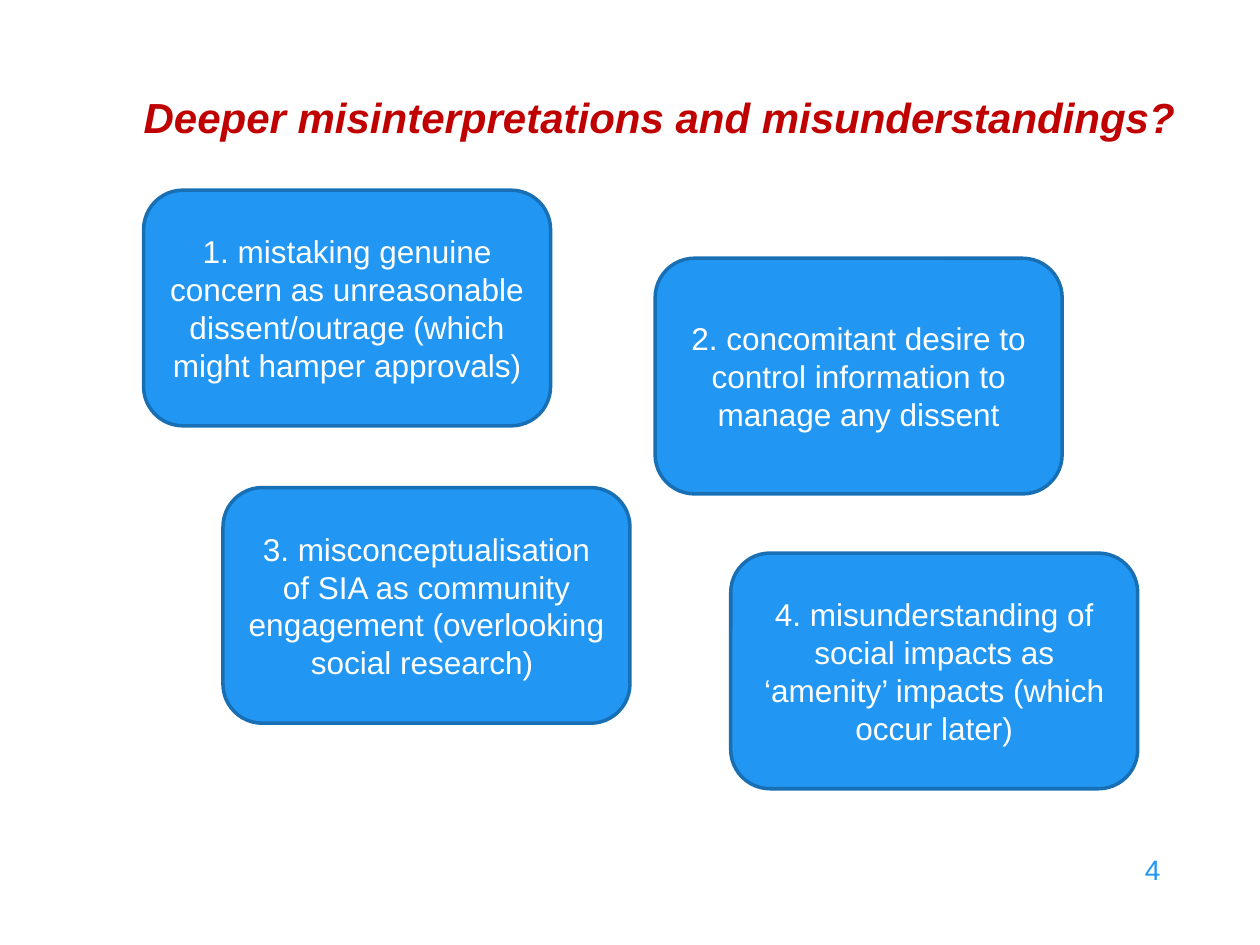
from pptx import Presentation
from pptx.dml.color import RGBColor
from pptx.enum.shapes import MSO_SHAPE
from pptx.enum.text import MSO_ANCHOR, PP_ALIGN
from pptx.util import Inches, Pt

ROUNDED = MSO_SHAPE.ROUNDED_RECTANGLE
TOP, MIDDLE, BOTTOM = MSO_ANCHOR.TOP, MSO_ANCHOR.MIDDLE, MSO_ANCHOR.BOTTOM
LEFT, CENTER, RIGHT = PP_ALIGN.LEFT, PP_ALIGN.CENTER, PP_ALIGN.RIGHT
RED = RGBColor(0xC0, 0x00, 0x00)
BLUE = RGBColor(0x21, 0x96, 0xF3)
DARK_BLUE = RGBColor(0x18, 0x6F, 0xB4)
WHITE = RGBColor(0xFF, 0xFF, 0xFF)


def set_text(shape, text, size, color, align, anchor):
    tf = shape.text_frame
    tf.word_wrap = True
    tf.vertical_anchor = anchor
    tf.text = text
    p = tf.paragraphs[0]
    p.alignment = align
    r = p.runs[0]
    r.font.name = "Arial"
    r.font.size = Pt(size)
    r.font.color.rgb = color
    return p


def add_label(s, left, top, width, height, *text_format):
    box = s.shapes.add_textbox(Inches(left), Inches(top), Inches(width), Inches(height))
    tf = box.text_frame
    tf.margin_left = tf.margin_right = tf.margin_top = tf.margin_bottom = 0
    return set_text(box, *text_format)


prs = Presentation()
prs.slide_width = Inches(10)
prs.slide_height = Inches(7.5)
s = prs.slides.add_slide(prs.slide_layouts[6])

# Title
p = add_label(s, 1.14, 0.76, 8.5, 0.87,
              "Deeper misinterpretations and misunderstandings?", 24, RED, LEFT, TOP)
p.line_spacing = 0.95
p.runs[0].font.bold = True
p.runs[0].font.italic = True

# Slide number
add_label(s, 8.78, 6.79, 0.43, 0.24, "4", 16, BLUE, RIGHT, BOTTOM)

# Staggered cards
cards = [
    (1.14, 1.51, "1. mistaking genuine concern as unreasonable dissent/outrage "
                 "(which might hamper approvals)"),
    (5.2, 2.05, "2. concomitant desire to control information to manage any dissent"),
    (1.77, 3.87, "3. misconceptualisation of SIA as community engagement "
                 "(overlooking social research) "),
    (5.8, 4.39, "4. misunderstanding of social impacts as ‘amenity’ impacts "
                "(which occur later)"),
]
for left, top, text in cards:
    sp = s.shapes.add_shape(ROUNDED, Inches(left), Inches(top), Inches(3.23), Inches(1.87))
    sp.shadow.inherit = False
    sp.fill.solid()
    sp.fill.fore_color.rgb = BLUE
    sp.line.color.rgb = DARK_BLUE
    sp.line.width = Pt(2)
    set_text(sp, text, 18, WHITE, CENTER, MIDDLE)

prs.save("out.pptx")
